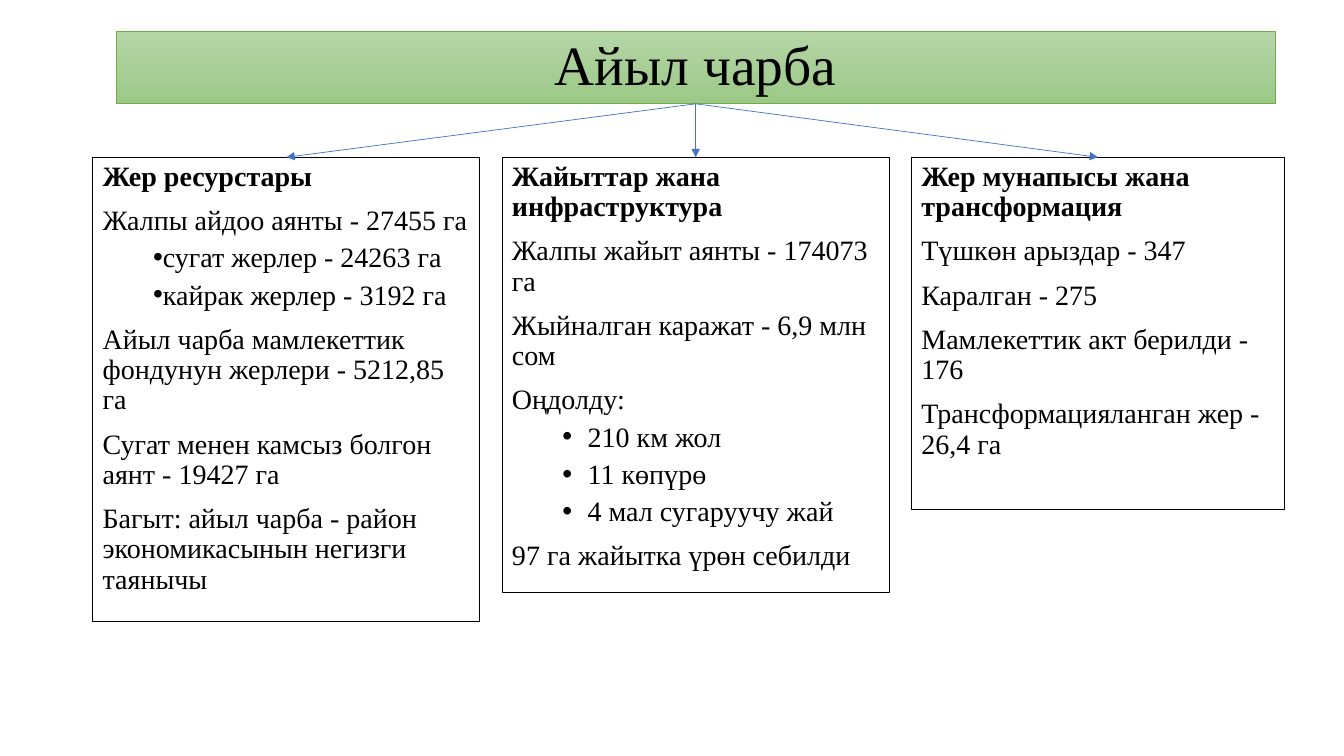
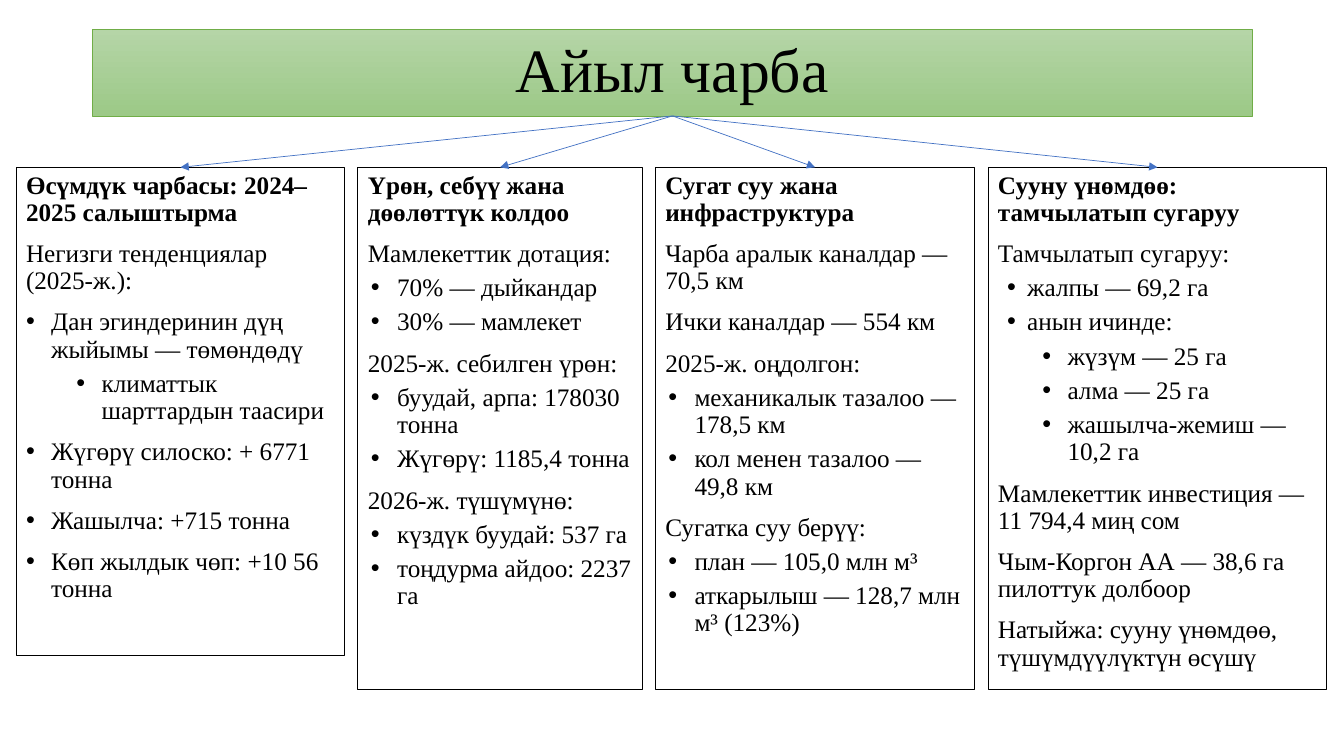
from dataclasses import dataclass

from lxml import etree
from pptx import Presentation
from pptx import util as u
from pptx.dml.color import RGBColor
from pptx.enum import shapes, text
from pptx.oxml.ns import qn


@dataclass(frozen=True)
class Theme:
    font: str = "Times New Roman"
    ink: str = "000000"
    band: tuple = ("B5D5A7", "9CC987")
    band_edge: str = "70AD47"
    arrow: str = "4472C4"
    thin: float = 0.5
    edge: float = 0.75
    line_spacing: float = 0.9
    space: tuple = (10, 5, 5)


THEME = Theme()
WIDTH, HEIGHT = 13.33, 7.5
BAND_WIDTH = 11.5
TITLE = "Айыл чарба"

# (level, text) is a bullet; a bare string is a plain line.
SLIDES = [
    {
        "band": (1.15, 0.31, 0.72), "title_size": 39.6, "text_size": 20,
        "left": 0.92, "top": 1.56, "gap": 0.22,
        "columns": [
            {
                "width": 3.84, "height": 4.61, "indents": {1: (0.4, 0.1)},
                "heading": "Жер ресурстары",
                "lines": [
                    "Жалпы айдоо аянты - 27455 га",
                    (1, "сугат жерлер - 24263 га"),
                    (1, "кайрак жерлер - 3192 га"),
                    "Айыл чарба мамлекеттик фондунун жерлери - 5212,85 га",
                    "Сугат менен камсыз болгон аянт - 19427 га",
                    "Багыт: айыл чарба - район экономикасынын негизги таянычы",
                ],
            },
            {
                "width": 3.84, "height": 4.32, "indents": {1: (0.75, -0.25)},
                "heading": "Жайыттар жана инфраструктура",
                "lines": [
                    "Жалпы жайыт аянты - 174073 га",
                    "Жыйналган каражат - 6,9 млн сом",
                    "Оңдолду:",
                    (1, "210 км жол"),
                    (1, "11 көпүрө"),
                    (1, "4 мал сугаруучу жай"),
                    "97 га жайытка үрөн себилди",
                ],
            },
            {
                "width": 3.7, "height": 3.5, "indents": {},
                "heading": "Жер мунапысы жана трансформация",
                "lines": [
                    "Түшкөн арыздар - 347",
                    "Каралган - 275",
                    "Мамлекеттик акт берилди - 176",
                    "Трансформацияланган жер - 26,4 га",
                ],
            },
        ],
    },
    {
        "band": (0.92, 0.29, 0.86), "title_size": 44, "text_size": 18,
        "left": 0.16, "top": 1.66, "gap": 0.13,
        "columns": [
            {
                "width": 3.26, "height": 4.84,
                "indents": {0: (0.25, -0.25), 1: (0.75, -0.25)},
                "heading": "Өсүмдүк чарбасы: 2024–2025 салыштырма",
                "lines": [
                    "Негизги тенденциялар (2025-ж.):",
                    (0, "Дан эгиндеринин дүң жыйымы — төмөндөдү"),
                    (1, "климаттык шарттардын таасири"),
                    (0, "Жүгөрү силоско: + 6771 тонна"),
                    (0, "Жашылча: +715 тонна"),
                    (0, "Көп жылдык чөп: +10 56 тонна"),
                ],
            },
            {
                "width": 2.82, "height": 5.18, "indents": {1: (0.29, -0.26)},
                "heading": "Үрөн, себүү жана дөөлөттүк колдоо",
                "lines": [
                    "Мамлекеттик дотация:",
                    (1, "70% — дыйкандар"),
                    (1, "30% — мамлекет"),
                    "2025-ж. себилген үрөн:",
                    (1, "буудай, арпа: 178030 тонна"),
                    (1, "Жүгөрү: 1185,4 тонна"),
                    "2026-ж. түшүмүнө:",
                    (1, "күздүк буудай: 537 га"),
                    (1, "тоңдурма айдоо: 2237 га"),
                ],
            },
            {
                "width": 3.17, "height": 5.18, "indents": {1: (0.29, -0.26)},
                "heading": "Сугат суу жана инфраструктура",
                "lines": [
                    "Чарба аралык каналдар — 70,5 км",
                    "Ички каналдар — 554 км",
                    "2025-ж. оңдолгон:",
                    (1, "механикалык тазалоо — 178,5 км"),
                    (1, "кол менен тазалоо — 49,8 км"),
                    "Сугатка суу берүү:",
                    (1, "план — 105,0 млн м³"),
                    (1, "аткарылыш — 128,7 млн м³ (123%)"),
                ],
            },
            {
                "width": 3.36, "height": 5.18,
                "indents": {1: (0.29, -0.2), 2: (0.69, -0.25)},
                "heading": "Сууну үнөмдөө: тамчылатып сугаруу",
                "lines": [
                    "Тамчылатып сугаруу:",
                    (1, "жалпы — 69,2 га"),
                    (1, "анын ичинде:"),
                    (2, "жүзүм — 25 га"),
                    (2, "алма — 25 га"),
                    (2, "жашылча-жемиш — 10,2 га"),
                    "Мамлекеттик инвестиция — 11 794,4 миң сом",
                    "Чым-Коргон АА — 38,6 га пилоттук долбоор",
                    "Натыйжа: сууну үнөмдөө, түшүмдүүлүктүн өсүшү",
                ],
            },
        ],
    },
]


def write_line(para, words, *, size, bold=False, align=text.PP_ALIGN.LEFT,
               level=0, indent=None, before=0):
    para.level = level
    if indent:
        props = para._p.get_or_add_pPr()
        margin, hanging = indent
        props.set("marL", str(u.Inches(margin)))
        props.set("indent", str(u.Inches(hanging)))
        etree.SubElement(props, qn("a:buFont")).set("typeface", "Arial")
        etree.SubElement(props, qn("a:buChar")).set("char", "•")
    para.alignment = align
    para.line_spacing = THEME.line_spacing
    para.space_before = u.Pt(before)
    span = para.add_run()
    span.text = words
    span.font.name = THEME.font
    span.font.size = u.Pt(size)
    span.font.bold = bold
    span.font.color.rgb = RGBColor.from_string(THEME.ink)


def set_line(shape, color, width):
    shape.line.color.rgb = RGBColor.from_string(color)
    shape.line.width = u.Pt(width)


def add_band(page, left, top, height, size):
    band = page.shapes.title
    band.left, band.top = u.Inches(left), u.Inches(top)
    band.width, band.height = u.Inches(BAND_WIDTH), u.Inches(height)
    band.fill.gradient()
    band.fill.gradient_angle = 270
    for stop, color in zip(band.fill.gradient_stops, THEME.band):
        stop.color.rgb = RGBColor.from_string(color)
    set_line(band, THEME.band_edge, THEME.thin)
    frame = band.text_frame
    frame.auto_size = text.MSO_AUTO_SIZE.NONE
    frame.vertical_anchor = text.MSO_ANCHOR.MIDDLE
    write_line(frame.paragraphs[0], TITLE, size=size, align=text.PP_ALIGN.CENTER)
    return band


def add_column(page, column, left, top, size):
    box = page.shapes.add_textbox(*map(u.Inches, (left, top, column["width"], column["height"])))
    set_line(box, THEME.ink, THEME.edge)
    frame = box.text_frame
    frame.word_wrap = True
    write_line(frame.paragraphs[0], column["heading"], size=size, bold=True)
    for line in column["lines"]:
        bullet = isinstance(line, tuple)
        level, words = line if bullet else (0, line)
        write_line(frame.add_paragraph(), words, size=size, level=level,
                   indent=column["indents"][level] if bullet else None,
                   before=THEME.space[level])
    return box


def add_arrow(page, band, box):
    arrow = page.shapes.add_connector(shapes.MSO_CONNECTOR.STRAIGHT, 0, 0, 0, 0)
    arrow.begin_connect(band, 2)
    arrow.end_connect(box, 0)
    set_line(arrow, THEME.arrow, THEME.thin)
    etree.SubElement(arrow.line._get_or_add_ln(), qn("a:tailEnd")).set("type", "triangle")
    etree.SubElement(arrow._element.spPr, qn("a:effectLst"))


def build_page(deck, content):
    page = deck.slides.add_slide(deck.slide_layouts[5])
    band = add_band(page, *content["band"], content["title_size"])
    left = content["left"]
    boxes = []
    for column in content["columns"]:
        boxes.append(add_column(page, column, left, content["top"], content["text_size"]))
        left += column["width"] + content["gap"]
    for box in boxes:
        add_arrow(page, band, box)


def main():
    deck = Presentation()
    deck.slide_width, deck.slide_height = u.Inches(WIDTH), u.Inches(HEIGHT)
    for content in SLIDES:
        build_page(deck, content)
    deck.save("out.pptx")


if __name__ == "__main__":
    main()
